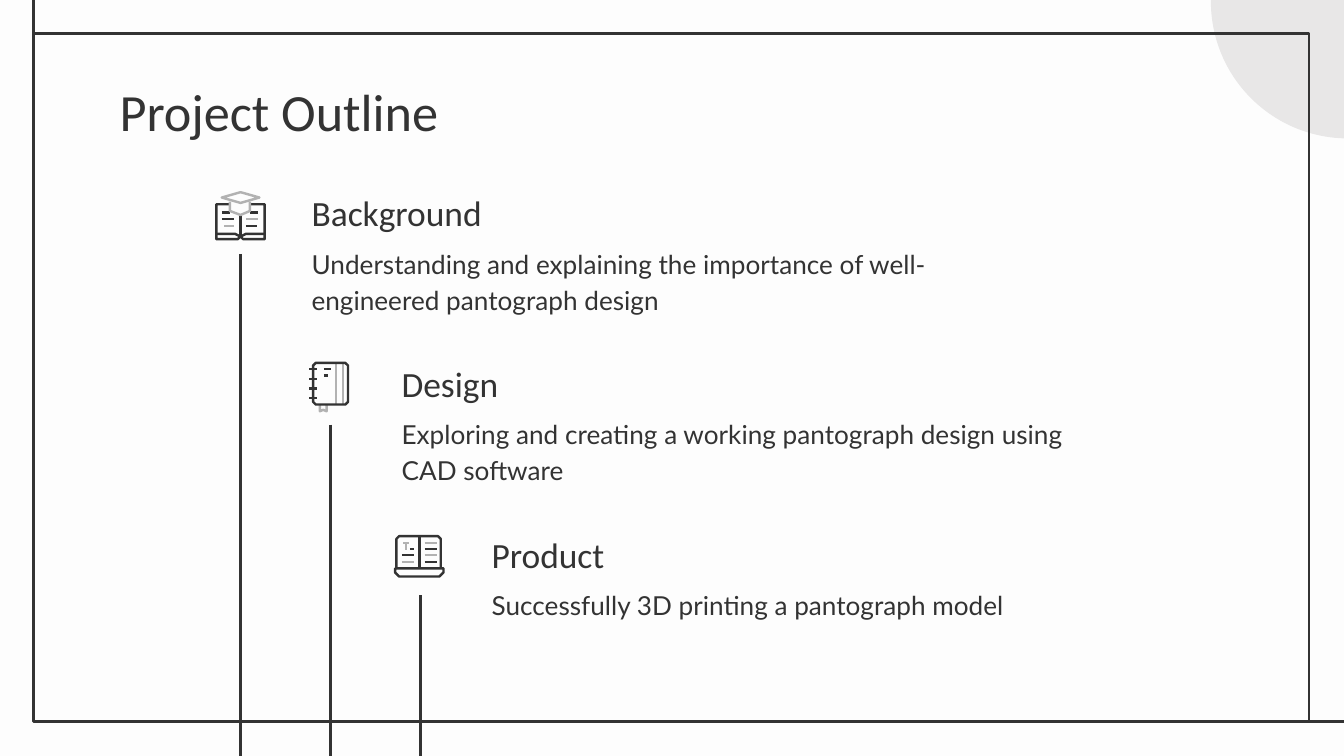
from dataclasses import dataclass
from pptx import Presentation
from pptx.dml.color import RGBColor
from pptx.enum.shapes import MSO_CONNECTOR, MSO_SHAPE
from pptx.enum.text import MSO_ANCHOR, PP_ALIGN
from pptx.oxml.ns import qn
from pptx.util import Inches, Pt
from lxml.etree import SubElement


@dataclass(frozen=True)
class Theme:
    ink: str = "333333"
    soft: str = "B2B2B2"
    disc: str = "E8E7E7"
    paper: str = "FDFDFD"
    head_font: str = "Calibri"
    body_font: str = "Lato"
    title: int = 28
    heading: int = 19
    body: int = 14
    rule: float = 1.5
    icon: float = 1.3


T = Theme()
W = 10
H = W * 9 / 16
UNIT = 0.01
STEP_X, STEP_Y = 0.67, 1.27
ICON_X, ICON_Y, ICON = 1.5, 1.32, 0.56
TEXT_X, TEXT_W = 2.22, 5.33
HEAD_Y, HEAD_H = 1.37, 0.47
BODY_Y, BODY_H = 1.71, 0.58
RAIL_X, RAIL_Y = 1.79, 1.89
LEFT, TOP, RIGHT, BOTTOM = 0.25, 0.25, 9.74, 5.37


def dash(x1, x2, y):
    return [(x1, y), (x2, y)]


BOOK = [
    (T.ink, [(21, 20), (11, 20), (11, 46), (27, 46), (29, 44), (31, 46),
             (47, 46), (47, 20), (36, 20)]),
    (T.ink, [(11, 42), (25, 42), (29, 44), (33, 42), (47, 42)]),
    (T.ink, [(29, 29), (29, 44)]),
    (T.ink, dash(15, 21, 26)), (T.ink, dash(36, 42, 26)),
    (T.ink, dash(15, 24, 31)), (T.soft, dash(33, 42, 31)),
    (T.soft, dash(17, 24, 36)), (T.ink, dash(33, 41, 36)),
    (T.soft, [(15, 15), (29, 11), (43, 15), (29, 19), (15, 15)]),
    (T.soft, [(21, 18), (21, 25), (29, 28), (36, 25), (36, 18)]),
]
NOTEBOOK = [
    *[(T.soft, [(x, 11), (x, 42)]) for x in (33, 38)],
    (T.soft, [(21, 42), (21, 47), (23.5, 46), (26, 47), (26, 42)]),
    (T.ink, [(18, 11), (40, 11), (42, 13), (42, 40), (40, 42), (18, 42),
             (16, 40), (16, 13), (18, 11)]),
    *[(T.ink, dash(13, 19, y)) for y in (15.5, 23, 30, 37)],
    (T.ink, dash(24, 29, 15.5)), (T.ink, dash(24, 27, 20.5)),
]
LAPTOP = [
    (T.ink, [(11, 37), (11, 15), (13, 13), (42, 13), (44, 15), (44, 37)]),
    (T.ink, [(10, 37), (46, 37), (46, 40), (43, 43), (13, 43), (10, 40),
             (10, 37)]),
    (T.ink, [(28, 13), (28, 37)]),
    (T.soft, dash(16, 20, 18)), (T.soft, [(18, 18), (18, 23)]),
    (T.ink, dash(21, 24, 22.5)),
    (T.ink, dash(15, 24, 27)), (T.soft, dash(15, 24, 32)),
    *[(c, dash(32, 41, y)) for c, y in
      ((T.soft, 18), (T.ink, 22.5), (T.soft, 27), (T.ink, 32))],
]
TITLE = "Project Outline"
STAGES = [
    ("Background", "Understanding and explaining the importance of "
     "well-engineered pantograph design", BOOK),
    ("Design", "Exploring and creating a working pantograph design using "
     "CAD software", NOTEBOOK),
    ("Product", "Successfully 3D printing a pantograph model", LAPTOP),
]


def rgb(color):
    return RGBColor.from_string(color)


def write(sp, text, *, font, size, anchor=MSO_ANCHOR.TOP, spacing=1.0):
    tf = sp.text_frame
    tf.word_wrap = True
    tf.vertical_anchor = anchor
    tf.margin_left = tf.margin_right = Inches(0.1)
    tf.margin_top = tf.margin_bottom = Inches(0.1)
    p = tf.paragraphs[0]
    p.alignment = PP_ALIGN.LEFT
    p.line_spacing = spacing
    r = p.add_run()
    r.text = text
    r.font.name = font
    r.font.size = Pt(size)
    r.font.color.rgb = rgb(T.ink)


def place(sp, *box):
    sp.left, sp.top, sp.width, sp.height = map(Inches, box)


def outline(sp, color, width):
    sp.line.color.rgb = rgb(color)
    sp.line.width = Pt(width)


def add_line(s, x1, y1, x2, y2, color=T.ink, width=T.rule):
    sp = s.shapes.add_connector(MSO_CONNECTOR.STRAIGHT,
                                *map(Inches, (x1, y1, x2, y2)))
    outline(sp, color, width)
    SubElement(sp.element.spPr, qn("a:effectLst"))


def add_shape(s, kind, *box, fill=None):
    sp = s.shapes.add_shape(kind, *map(Inches, box))
    sp.shadow.inherit = False
    if fill:
        sp.fill.solid()
        sp.fill.fore_color.rgb = rgb(fill)
        sp.line.fill.background()
    else:
        sp.fill.background()
        outline(sp, T.ink, T.rule)


def add_icon(s, x, y, strokes):
    add_shape(s, MSO_SHAPE.RECTANGLE, x, y, ICON, ICON, fill=T.paper)
    for color, points in strokes:
        pts = [(x + px * UNIT, y + py * UNIT) for px, py in points]
        if len(pts) == 2:
            add_line(s, *pts[0], *pts[1], color=color, width=T.icon)
            continue
        emu = [(Inches(px), Inches(py)) for px, py in pts]
        fb = s.shapes.build_freeform(*emu[0])
        fb.add_line_segments(emu[1:], close=emu[0] == emu[-1])
        sp = fb.convert_to_shape()
        sp.shadow.inherit = False
        sp.fill.background()
        outline(sp, color, T.icon)


def add_frame(s):
    add_shape(s, MSO_SHAPE.OVAL, 9.01, -1.01, 2.04, 2.04, fill=T.disc)
    add_shape(s, MSO_SHAPE.RECTANGLE, LEFT, TOP, RIGHT - LEFT, BOTTOM - TOP)
    add_line(s, LEFT, TOP, LEFT, 0)
    add_line(s, RIGHT, BOTTOM, W, BOTTOM)


def add_stage(s, i, heading, body, strokes):
    dx, dy = i * STEP_X, i * STEP_Y
    add_icon(s, ICON_X + dx, ICON_Y + dy, strokes)
    add_line(s, RAIL_X + dx, RAIL_Y + dy, RAIL_X + dx, H)
    for text, y, h, fmt in (
        (body, BODY_Y, BODY_H, dict(font=T.body_font, size=T.body)),
        (heading, HEAD_Y, HEAD_H, dict(font=T.head_font, size=T.heading,
                                       anchor=MSO_ANCHOR.BOTTOM)),
    ):
        sp = s.shapes.add_textbox(*map(Inches, (TEXT_X + dx, y + dy, TEXT_W, h)))
        write(sp, text, spacing=1.15, **fmt)


def main():
    prs = Presentation()
    prs.slide_width, prs.slide_height = Inches(W), Inches(H)
    s = prs.slides.add_slide(prs.slide_layouts[5])
    s.background.fill.solid()
    s.background.fill.fore_color.rgb = rgb(T.paper)
    add_frame(s)
    place(s.shapes.title, 0.79, 0.49, 8.43, 0.63)
    write(s.shapes.title, TITLE, font=T.head_font, size=T.title)
    for i, stage in enumerate(STAGES):
        add_stage(s, i, *stage)
    prs.save("out.pptx")


if __name__ == "__main__":
    main()
